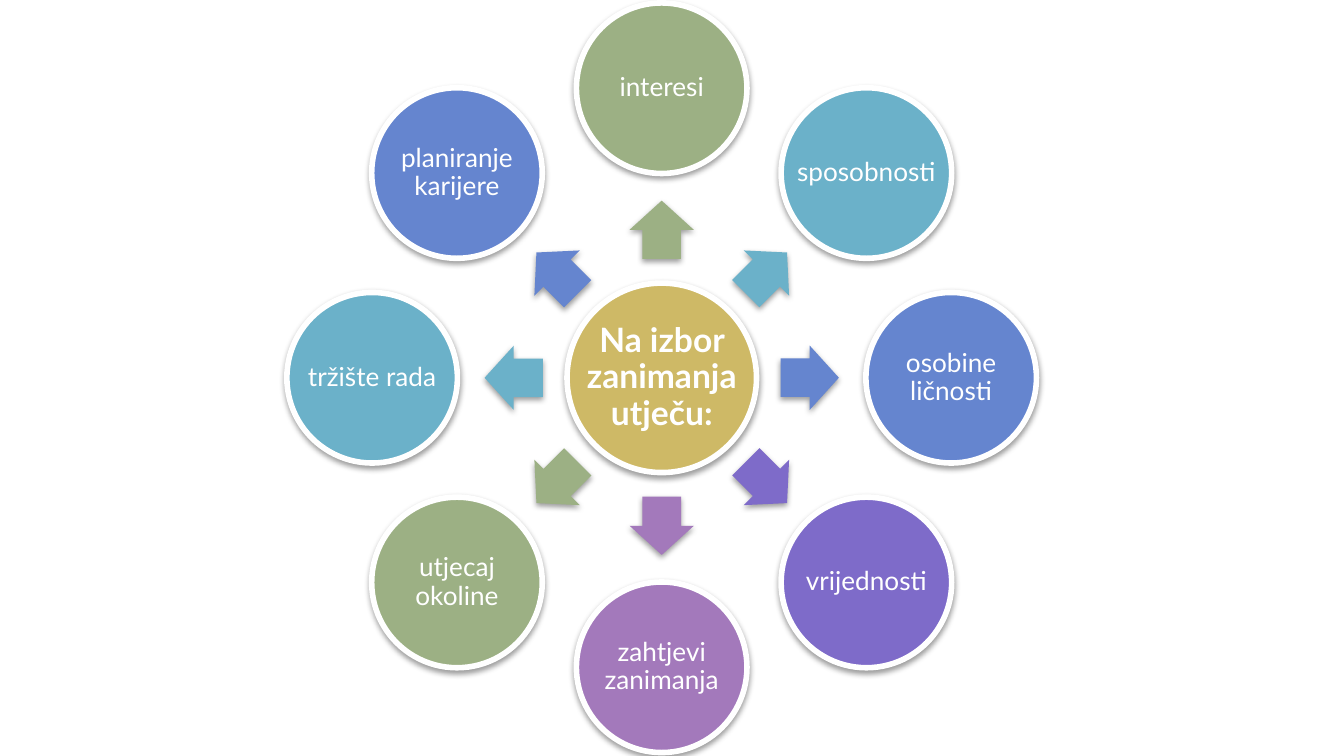
import math

import pptx
import pptx.dml.color
import pptx.enum.shapes
import pptx.enum.text
import pptx.oxml
import pptx.oxml.ns
import pptx.util

Pt = pptx.util.Pt
SHAPES = pptx.enum.shapes.MSO_SHAPE

COLORS = {
    "white": "FFFFFF",
    "gold": "CEB966",
    "green": "9CB084",
    "teal": "6BB1C9",
    "blue": "6585CF",
    "violet": "7E6BC9",
    "plum": "A379BB",
}

FACTORS = [
    ("interesi", "green"),
    ("sposobnosti", "teal"),
    ("osobine ličnosti", "blue"),
    ("vrijednosti", "violet"),
    ("zahtjevi zanimanja", "plum"),
    ("utjecaj okoline", "green"),
    ("tržište rada", "teal"),
    ("planiranje karijere", "blue"),
]

HUB_X, HUB_Y = 354.5, 202.4
HUB_SIZE, FACTOR_SIZE = 101.5, 91.4
FACTOR_RADIUS, ARROW_RADIUS = 155.1, 79.3
ARROW_LENGTH, ARROW_HEIGHT = 31.2, 34.4

SHADOW = (
    f'<a:outerShdw {pptx.oxml.ns.nsdecls("a")} blurRad="{Pt(3.1)}" '
    f'dist="{Pt(1.6)}" dir="5400000" rotWithShape="0">'
    '<a:srgbClr val="000000"><a:alpha val="38000"/></a:srgbClr></a:outerShdw>'
)


def rgb(color):
    return pptx.dml.color.RGBColor.from_string(COLORS[color])


def centered_box(x, y, width, height):
    return Pt(x - width / 2), Pt(y - height / 2), Pt(width), Pt(height)


def add_shadow(shape):
    shape.shadow.inherit = False
    effects = shape._element.spPr.find(pptx.oxml.ns.qn("a:effectLst"))
    effects.append(pptx.oxml.parse_xml(SHADOW))


def add_label(slide, text, box, size=14, bold=False, color="white", inset=5):
    label = slide.shapes.add_textbox(*box)
    frame = label.text_frame
    frame.word_wrap = True
    frame.vertical_anchor = pptx.enum.text.MSO_ANCHOR.MIDDLE
    frame.margin_left = frame.margin_right = Pt(inset)
    frame.margin_top = frame.margin_bottom = Pt(2)
    paragraph = frame.paragraphs[0]
    paragraph.alignment = pptx.enum.text.PP_ALIGN.CENTER
    paragraph.line_spacing = 0.9
    run = paragraph.add_run()
    run.text = text
    run.font.name = "Lato"
    run.font.size = Pt(size)
    run.font.bold = bold
    run.font.color.rgb = rgb(color)


def add_circle(slide, text, x, y, diameter, color, **text_format):
    box = centered_box(x, y, diameter, diameter)
    circle = slide.shapes.add_shape(SHAPES.OVAL, *box)
    circle.fill.solid()
    circle.fill.fore_color.rgb = rgb(color)
    circle.line.color.rgb = rgb("white")
    circle.line.width = Pt(3)
    add_shadow(circle)
    add_label(slide, text, box, **text_format)


def add_arrow(slide, x, y, angle, color):
    box = centered_box(x, y, ARROW_LENGTH, ARROW_HEIGHT)
    arrow = slide.shapes.add_shape(SHAPES.RIGHT_ARROW, *box)
    arrow.adjustments[0] = 0.6
    arrow.adjustments[1] = 0.5
    arrow.rotation = angle
    arrow.fill.solid()
    arrow.fill.fore_color.rgb = rgb(color)
    arrow.line.fill.background()
    add_shadow(arrow)


def around_hub(radius, angle):
    direction = math.radians(angle)
    return HUB_X + radius * math.cos(direction), HUB_Y + radius * math.sin(direction)


def main():
    presentation = pptx.Presentation()
    presentation.slide_width = Pt(720)
    presentation.slide_height = Pt(405)
    slide = presentation.slides.add_slide(presentation.slide_layouts[6])

    add_circle(slide, "Na izbor zanimanja utječu:", HUB_X, HUB_Y, HUB_SIZE,
               "gold", size=18, bold=True)
    for index, (factor, color) in enumerate(FACTORS):
        angle = (270 + index * 360 / len(FACTORS)) % 360
        add_arrow(slide, *around_hub(ARROW_RADIUS, angle), angle, color)
        add_circle(slide, factor, *around_hub(FACTOR_RADIUS, angle), FACTOR_SIZE, color)

    presentation.save("out.pptx")


if __name__ == "__main__":
    main()
